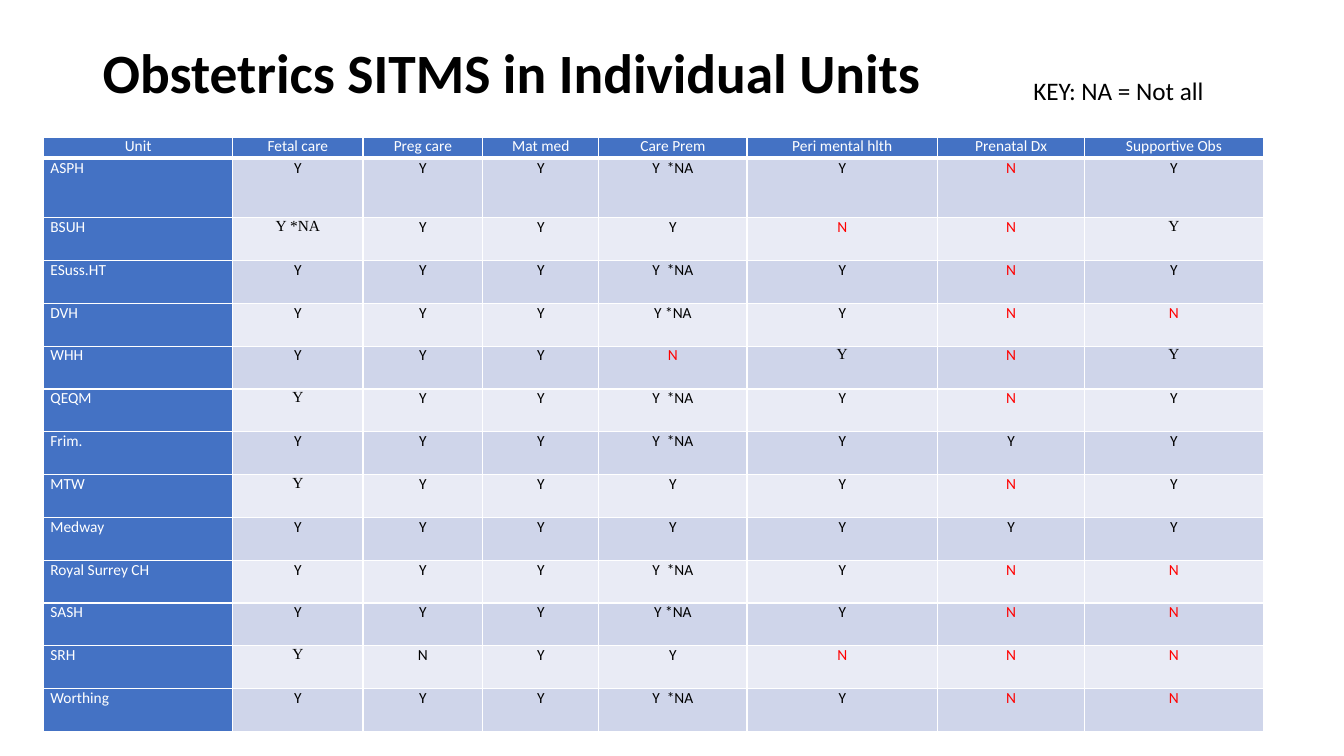
from dataclasses import dataclass

from lxml import etree
from pptx import Presentation
from pptx.dml.color import RGBColor
from pptx.enum import text as t
from pptx.oxml import ns
from pptx.util import Inches, Pt


@dataclass(frozen=True)
class Theme:
    blue: str = "4472C4"
    dark: str = "CFD5EA"
    light: str = "E9EBF5"
    white: str = "FFFFFF"
    black: str = "000000"
    red: str = "FF0000"
    sans: str = "Calibri"
    serif: str = "Times New Roman"
    title: float = 39.6
    key: float = 18
    body: float = 11


theme = Theme()


def style(para, size, color, font=theme.sans, bold=False):
    """Format every run of a paragraph."""
    for run in para.runs:
        run.font.size = Pt(size)
        run.font.name = font
        run.font.bold = bold
        run.font.color.rgb = RGBColor.from_string(color)


def border(cell, side, width):
    """Draw one white edge; call before the cell is filled."""
    props = cell._tc.get_or_add_tcPr()
    line = etree.SubElement(props, ns.qn("a:ln" + side), w=str(Pt(width)))
    fill = etree.SubElement(line, ns.qn("a:solidFill"))
    etree.SubElement(fill, ns.qn("a:srgbClr"), val=theme.white)


prs = Presentation()
prs.slide_width, prs.slide_height = Inches(13.33), Inches(7.5)
slide = prs.slides.add_slide(prs.slide_layouts[6])

# Title and key
labels = [
    ("Obstetrics SITMS in Individual Units", (0.92, 0.4, 11.5, 0.7),
     theme.title, True, t.MSO_ANCHOR.MIDDLE, 0.9),
    ("KEY: NA = Not all", (10.15, 0.7, 2.27, 0.4),
     theme.key, False, t.MSO_ANCHOR.TOP, 1.0),
]
for words, place, size, bold, anchor, space in labels:
    frame = slide.shapes.add_textbox(*map(Inches, place)).text_frame
    frame.word_wrap = True
    frame.vertical_anchor = anchor
    frame.text = words
    frame.paragraphs[0].line_spacing = space
    style(frame.paragraphs[0], size, theme.black, bold=bold)

# Services offered by each unit
heads = ["Unit", "Fetal care", "Preg care", "Mat med", "Care Prem",
         "Peri mental hlth", "Prenatal Dx", "Supportive Obs"]
units = [
    ["ASPH", "Y", "Y", "Y", "Y  *NA", "Y", "N", "Y"],
    ["BSUH", "Y *NA", "Y", "Y", "Y", "N", "N", "Y"],
    ["ESuss.HT", "Y", "Y", "Y", "Y  *NA", "Y", "N", "Y"],
    ["DVH", "Y", "Y", "Y", "Y *NA", "Y", "N", "N"],
    ["WHH", "Y", "Y", "Y", "N", "Y", "N", "Y"],
    ["QEQM", "Y", "Y", "Y", "Y  *NA", "Y", "N", "Y"],
    ["Frim.", "Y", "Y", "Y", "Y  *NA", "Y", "Y", "Y"],
    ["MTW", "Y", "Y", "Y", "Y", "Y", "N", "Y"],
    ["Medway", "Y", "Y", "Y", "Y", "Y", "Y", "Y"],
    ["Royal Surrey CH", "Y", "Y", "Y", "Y  *NA", "Y", "N", "N"],
    ["SASH", "Y", "Y", "Y", "Y *NA", "Y", "N", "N"],
    ["SRH", "Y", "N", "Y", "Y", "N", "N", "N"],
    ["Worthing", "Y", "Y", "Y", "Y  *NA", "Y", "N", "N"],
]
serifs = {("BSUH", 1), ("BSUH", 7), ("WHH", 5), ("WHH", 7),
          ("QEQM", 1), ("MTW", 1), ("SRH", 1)}
plain = {("SRH", 2)}  # the one N that stays black

widths = [1.88, 1.29, 1.19, 1.15, 1.47, 1.89, 1.46, 1.77]
tall, head, first = 5.9, 0.21, 0.59
rest = len(units) - 1
heights = [head, first] + [(tall - head - first) / rest] * rest

table = slide.shapes.add_table(
    len(heights), len(widths), Inches(0.43), Inches(1.36),
    Inches(sum(widths)), Inches(tall)).table
for col, width in zip(table.columns, widths):
    col.width = Inches(width)
for row, height in zip(table.rows, heights):
    row.height = Inches(height)

for r, line in enumerate([heads] + units):
    for c, words in enumerate(line):
        cell = table.cell(r, c)
        spot = (line[0], c)
        label = r == 0 or c == 0
        for side in "LRTB":
            border(cell, side, 3 if r == 0 and side == "B" else 1)
        cell.fill.solid()
        back = theme.blue if label else theme.dark if r % 2 else theme.light
        cell.fill.fore_color.rgb = RGBColor.from_string(back)
        cell.margin_left = cell.margin_right = Inches(0.07)
        cell.margin_top = cell.margin_bottom = 0
        cell.text_frame.text = words
        para = cell.text_frame.paragraphs[0]
        if r == 0 or c > 0:
            para.alignment = t.PP_ALIGN.CENTER
        if label:
            color = theme.white
        elif words == "N" and spot not in plain:
            color = theme.red
        else:
            color = theme.black
        font = theme.serif if spot in serifs else theme.sans
        style(para, theme.body, color, font)

prs.save("out.pptx")
